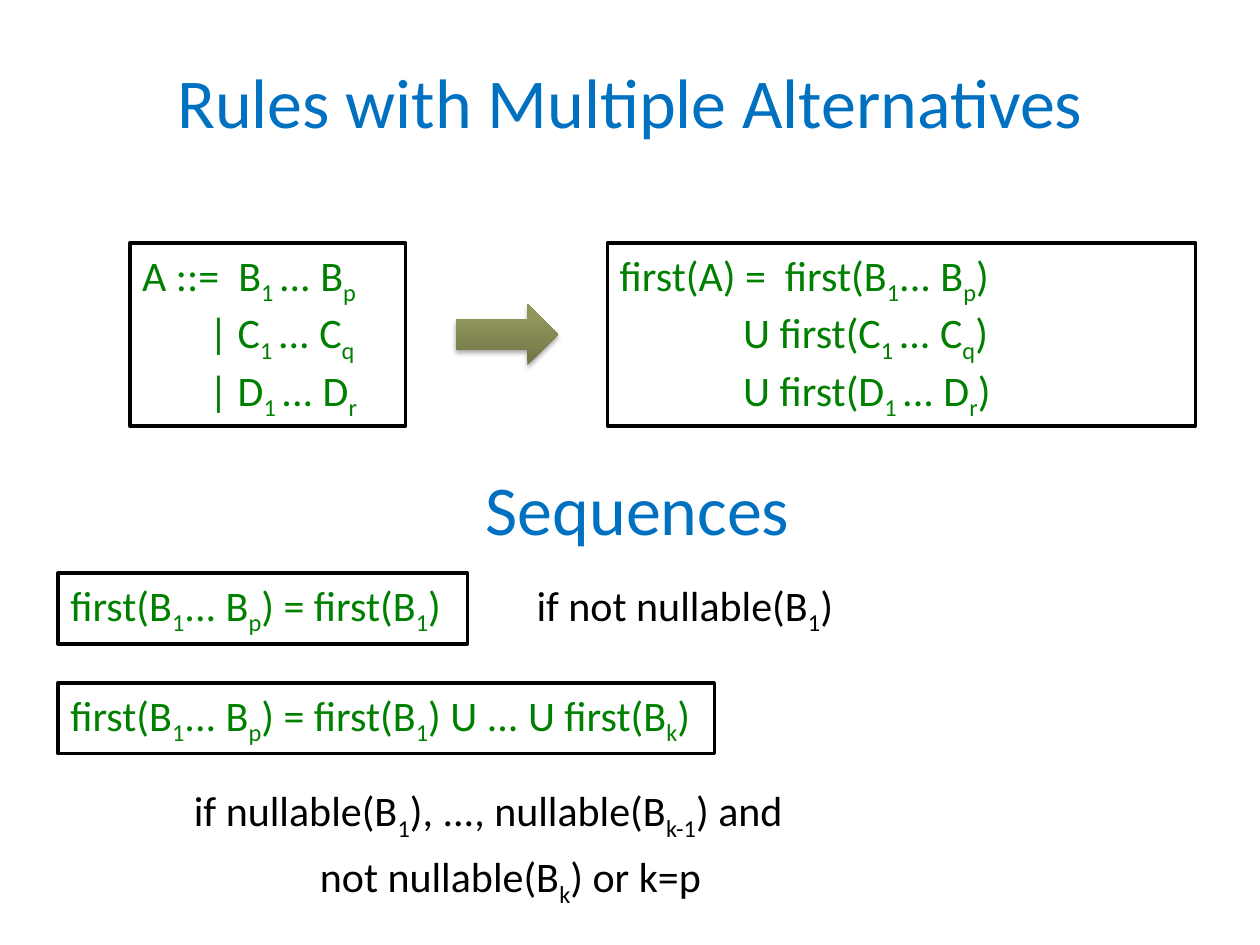
from dataclasses import dataclass
from lxml import etree
from pptx import Presentation
from pptx.dml.color import RGBColor
from pptx.enum.shapes import MSO_SHAPE
from pptx.enum.text import MSO_ANCHOR, PP_ALIGN
from pptx.oxml import parse_xml
from pptx.oxml.ns import nsdecls
from pptx.util import Inches, Pt

RECT = MSO_SHAPE.RECTANGLE
ARROW = MSO_SHAPE.RIGHT_ARROW
MIDDLE, TOP = MSO_ANCHOR.MIDDLE, MSO_ANCHOR.TOP
CENTER, LEFT = PP_ALIGN.CENTER, PP_ALIGN.LEFT
BLUE = RGBColor(0x00, 0x70, 0xC0)
GREEN = RGBColor(0x00, 0x80, 0x00)
BLACK = RGBColor(0x00, 0x00, 0x00)
WHITE = RGBColor(0xFF, 0xFF, 0xFF)
OLIVE = RGBColor(0x70, 0x74, 0x46)
MOSS = RGBColor(0x91, 0x96, 0x5B)
FONT = "Calibri"
SUB = "~"


@dataclass
class Area:
    left: float
    top: float
    width: float
    height: float

    def span(self) -> tuple:
        return tuple(map(Inches, (self.left, self.top, self.width, self.height)))


@dataclass
class Para:
    text: str
    margin: float = 0
    indent: float = 0


@dataclass
class Block:
    area: Area
    paras: list[Para]
    framed: bool = True


HEADS = [
    (Area(0.5, 0.17, 9, 1.25), "Rules with Multiple Alternatives"),
    (Area(0.56, 3.4, 9, 1.25), "Sequences"),
]
BLOCKS = [
    Block(Area(1.03, 1.93, 2.19, 1.45), [
        Para("A ::=  B~1 ~... B~p~\n| C~1 ~... C~q~\n| D~1 ~... D~r~", 0.53, -0.53)]),
    Block(Area(4.82, 1.93, 4.67, 1.45), [
        Para("first(A) =  first(B~1~... B~p~)\nU first(C~1 ~... C~q~)\n"
             "U first(D~1 ~... D~r~)", 0.98, -0.98)]),
    Block(Area(0.46, 4.55, 3.25, 0.56), [Para("first(B~1~... B~p~) = first(B~1~)")]),
    Block(Area(4.16, 4.55, 3.25, 0.56), [Para("if not nullable(B~1~)")], False),
    Block(Area(0.46, 5.42, 5.21, 0.56), [
        Para("first(B~1~... B~p~) = first(B~1~) U ... U first(B~k~)")]),
    Block(Area(1.44, 6.18, 5.65, 0.56), [
        Para("if nullable(B~1~), ..., nullable(B~k-1~) and"),
        Para("not nullable(B~k~) or k=p", 1)], False),
]


def style(para, size: int, color: RGBColor, align) -> None:
    para.alignment = align
    para.font.name = FONT
    para.font.size = Pt(size)
    para.font.color.rgb = color


def write(para, text: str) -> None:
    for row, line in enumerate(text.split("\n")):
        if row:
            para.add_line_break()
        for spot, part in enumerate(line.split(SUB)):
            if part:
                run = para.add_run()
                run.text = part
                if spot % 2:
                    run._r.get_or_add_rPr().set("baseline", "-25000")


def add_head(slide, area: Area, text: str) -> None:
    frame = slide.shapes.add_textbox(*area.span()).text_frame
    frame.word_wrap = True
    frame.vertical_anchor = MIDDLE
    para = frame.paragraphs[0]
    style(para, 40, BLUE, CENTER)
    write(para, text)


def add_block(slide, block: Block) -> None:
    if block.framed:
        shape = slide.shapes.add_shape(RECT, *block.area.span())
        shape.shadow.inherit = False
        shape.fill.solid()
        shape.fill.fore_color.rgb = WHITE
        shape.line.color.rgb = BLACK
        shape.line.width = Pt(2)
    else:
        shape = slide.shapes.add_textbox(*block.area.span())
    frame = shape.text_frame
    frame.word_wrap = True
    frame.vertical_anchor = TOP
    for row, item in enumerate(block.paras):
        para = frame.add_paragraph() if row else frame.paragraphs[0]
        style(para, 24, GREEN if block.framed else BLACK, LEFT)
        para.space_before = Pt(5)
        props = para._p.get_or_add_pPr()
        props.set("marL", str(Inches(item.margin)))
        props.set("indent", str(Inches(item.indent)))
        write(para, item.text)


def add_arrow(slide, area: Area) -> None:
    shape = slide.shapes.add_shape(ARROW, *area.span())
    shape.line.fill.background()
    shape.fill.gradient()
    shape.fill.gradient_angle = 90
    for stop, place, color in zip(shape.fill.gradient_stops, (0, 0.8), (OLIVE, MOSS)):
        stop.position = place
        stop.color.rgb = color
    glow = parse_xml(f"<a:effectLst {nsdecls('a')}/>")
    tag = glow.tag.replace("effectLst", "")
    shade = etree.SubElement(
        glow, tag + "outerShdw", blurRad=str(Pt(3.1)), dist=str(Pt(1.8)),
        dir="5400000", rotWithShape="0")
    color = etree.SubElement(shade, tag + "srgbClr", val=str(BLACK))
    etree.SubElement(color, tag + "alpha", val="35000")
    shape._element.spPr.append(glow)


def main() -> None:
    deck = Presentation()
    deck.slide_width, deck.slide_height = Inches(10), Inches(7.5)
    slide = deck.slides.add_slide(deck.slide_layouts[6])
    for area, text in HEADS:
        add_head(slide, area, text)
    for block in BLOCKS:
        add_block(slide, block)
    add_arrow(slide, Area(3.62, 2.41, 0.81, 0.49))
    deck.save("out.pptx")


if __name__ == "__main__":
    main()
